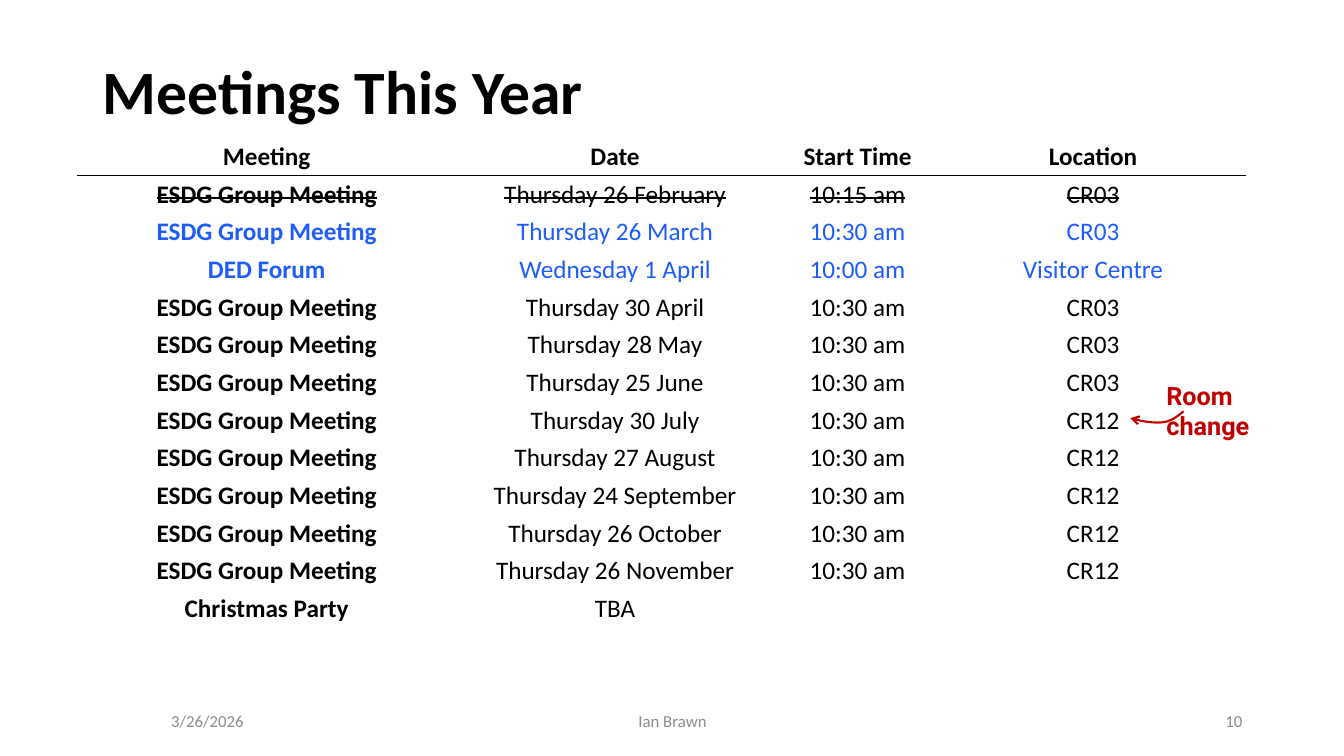
from dataclasses import dataclass

from lxml import etree
from pptx import Presentation
from pptx import util as u
from pptx.dml.color import RGBColor
from pptx.enum import text
from pptx.oxml import ns

SLIDE_W, SLIDE_H = u.Inches(13.33), u.Inches(7.5)
BLACK, BLUE, RED, GREY = "000000", "1E5DF8", "C00000", "8C8C8C"
LEFT, CENTER, RIGHT = text.PP_ALIGN.LEFT, text.PP_ALIGN.CENTER, text.PP_ALIGN.RIGHT
MIDDLE, TOP = text.MSO_ANCHOR.MIDDLE, text.MSO_ANCHOR.TOP


@dataclass(frozen=True)
class Area:
    x: float
    y: float
    w: float
    h: float

    def emu(self) -> tuple[int, int, int, int]:
        return col(self.x), row(self.y), col(self.w), row(self.h)


@dataclass(frozen=True)
class Style:
    size: float
    color: str = BLACK
    bold: bool = False
    strike: bool = False
    font: str = "Calibri"


@dataclass(frozen=True)
class Label:
    words: str
    area: Area
    style: Style
    align: text.PP_ALIGN = LEFT
    anchor: text.MSO_ANCHOR = MIDDLE


@dataclass(frozen=True)
class Meeting:
    name: str
    date: str
    start: str = "10:30 am"
    room: str = "CR03"
    color: str = BLACK
    past: bool = False


GROUP = "ESDG Group Meeting"
HEADINGS = ("Meeting", "Date", "Start Time", "Location")
MEETINGS = (
    Meeting(GROUP, "Thursday 26 February", "10:15 am", past=True),
    Meeting(GROUP, "Thursday 26 March", color=BLUE),
    Meeting("DED Forum", "Wednesday 1 April", "10:00 am", "Visitor Centre", BLUE),
    Meeting(GROUP, "Thursday 30 April"),
    Meeting(GROUP, "Thursday 28 May"),
    Meeting(GROUP, "Thursday 25 June"),
    Meeting(GROUP, "Thursday 30 July", room="CR12"),
    Meeting(GROUP, "Thursday 27 August", room="CR12"),
    Meeting(GROUP, "Thursday 24 September", room="CR12"),
    Meeting(GROUP, "Thursday 26 October", room="CR12"),
    Meeting(GROUP, "Thursday 26 November", room="CR12"),
    Meeting("Christmas Party", "TBA", "", ""),
)
TITLE_AREA = Area(6.9, 5.33, 86.27, 14.4)
TABLE_AREA = Area(5.78, 18.27, 86.88, 64.8)
COLUMN_WIDTHS = (28.13, 23.71, 12.38, 22.66)
FOOTER = Style(12, GREY)
LABELS = (
    Label("Room change", Area(86.05, 49.6, 11.85, 5.33),
          Style(18, RED, True, font="Roboto"), anchor=TOP),
    Label("3/26/2026", Area(12, 92.67, 17.4, 5.33), FOOTER),
    Label("Ian Brawn", Area(33.16, 92.67, 33.76, 5.33), FOOTER, CENTER),
    Label("10", Area(70.67, 92.67, 22.5, 5.33), FOOTER, RIGHT),
)
ARROW_CURVES = (
    ((88.07, 54.4), (87.62, 55.07), (87.17, 55.73), (86.5, 55.87)),
    ((86.5, 55.87), (85.82, 56), (84.92, 55.73), (84.1, 55.33)),
)
CURVE_STEPS = 12


def col(n: float) -> int:
    return round(SLIDE_W * n / 100)


def row(n: float) -> int:
    return round(SLIDE_H * n / 100)


def rgb(value: str) -> RGBColor:
    return RGBColor.from_string(value)


def add_run(p, words: str, style: Style) -> None:
    r = p.add_run()
    r.text = words
    r.font.name = style.font
    r.font.size = u.Pt(style.size)
    r.font.bold = style.bold
    r.font.color.rgb = rgb(style.color)
    if style.strike:
        r.font._element.set("strike", "sngStrike")


def add_title(s) -> None:
    sp = s.shapes.title
    sp.left, sp.top, sp.width, sp.height = TITLE_AREA.emu()
    tf = sp.text_frame
    tf.auto_size = text.MSO_AUTO_SIZE.NONE
    tf.vertical_anchor = MIDDLE
    p = tf.paragraphs[0]
    p.alignment = LEFT
    p.line_spacing = 0.9
    add_run(p, "Meetings This Year", Style(44, bold=True))


def add_label(s, label: Label) -> None:
    tf = s.shapes.add_textbox(*label.area.emu()).text_frame
    tf.word_wrap = True
    tf.vertical_anchor = label.anchor
    p = tf.paragraphs[0]
    p.alignment = label.align
    add_run(p, label.words, label.style)


def add_border(cell, side: str) -> None:
    ln = etree.Element(ns.qn(f"a:{side}"), w=str(u.Pt(1)))
    fill = etree.SubElement(ln, ns.qn("a:solidFill"))
    etree.SubElement(fill, ns.qn("a:srgbClr"), val=BLACK)
    cell._tc.get_or_add_tcPr().insert(0, ln)


def fill_cell(cell, words: str, style: Style) -> None:
    cell.fill.background()
    cell.vertical_anchor = MIDDLE
    cell.margin_left = cell.margin_right = u.Inches(0.03)
    cell.margin_top = cell.margin_bottom = u.Inches(0.03)
    p = cell.text_frame.paragraphs[0]
    p.alignment = CENTER
    if words:
        add_run(p, words, style)


def add_schedule(s) -> None:
    count = len(MEETINGS) + 1
    table = s.shapes.add_table(count, len(HEADINGS), *TABLE_AREA.emu()).table
    table.first_row = table.horz_banding = False
    for column, width in zip(table.columns, COLUMN_WIDTHS):
        column.width = col(width)
    for line in table.rows:
        line.height = row(TABLE_AREA.h / count)
    for c, heading in enumerate(HEADINGS):
        fill_cell(table.cell(0, c), heading, Style(18, bold=True))
        add_border(table.cell(0, c), "lnB")
        add_border(table.cell(1, c), "lnT")
    for i, m in enumerate(MEETINGS, 1):
        for c, words in enumerate((m.name, m.date, m.start, m.room)):
            fill_cell(table.cell(i, c), words, Style(18, m.color, c == 0, m.past))


def curve_point(curve: tuple, t: float) -> tuple[int, int]:
    weights = ((1 - t) ** 3, 3 * t * (1 - t) ** 2, 3 * t * t * (1 - t), t ** 3)
    x, y = (sum(k * pt[axis] for k, pt in zip(weights, curve)) for axis in (0, 1))
    return col(x), row(y)


def add_arrow(s) -> None:
    points = [curve_point(curve, i / CURVE_STEPS)
              for curve in ARROW_CURVES for i in range(1, CURVE_STEPS + 1)]
    builder = s.shapes.build_freeform(*curve_point(ARROW_CURVES[0], 0))
    builder.add_line_segments(points, close=False)
    sp = builder.convert_to_shape()
    sp.shadow.inherit = False
    sp.fill.background()
    sp.line.color.rgb = rgb(RED)
    sp.line.width = u.Pt(1.5)
    etree.SubElement(sp.line._get_or_add_ln(), ns.qn("a:tailEnd"), type="arrow")


def main() -> None:
    prs = Presentation()
    prs.slide_width, prs.slide_height = SLIDE_W, SLIDE_H
    s = prs.slides.add_slide(prs.slide_layouts[5])
    add_title(s)
    add_schedule(s)
    for label in LABELS:
        add_label(s, label)
    add_arrow(s)
    prs.save("out.pptx")


if __name__ == "__main__":
    main()
